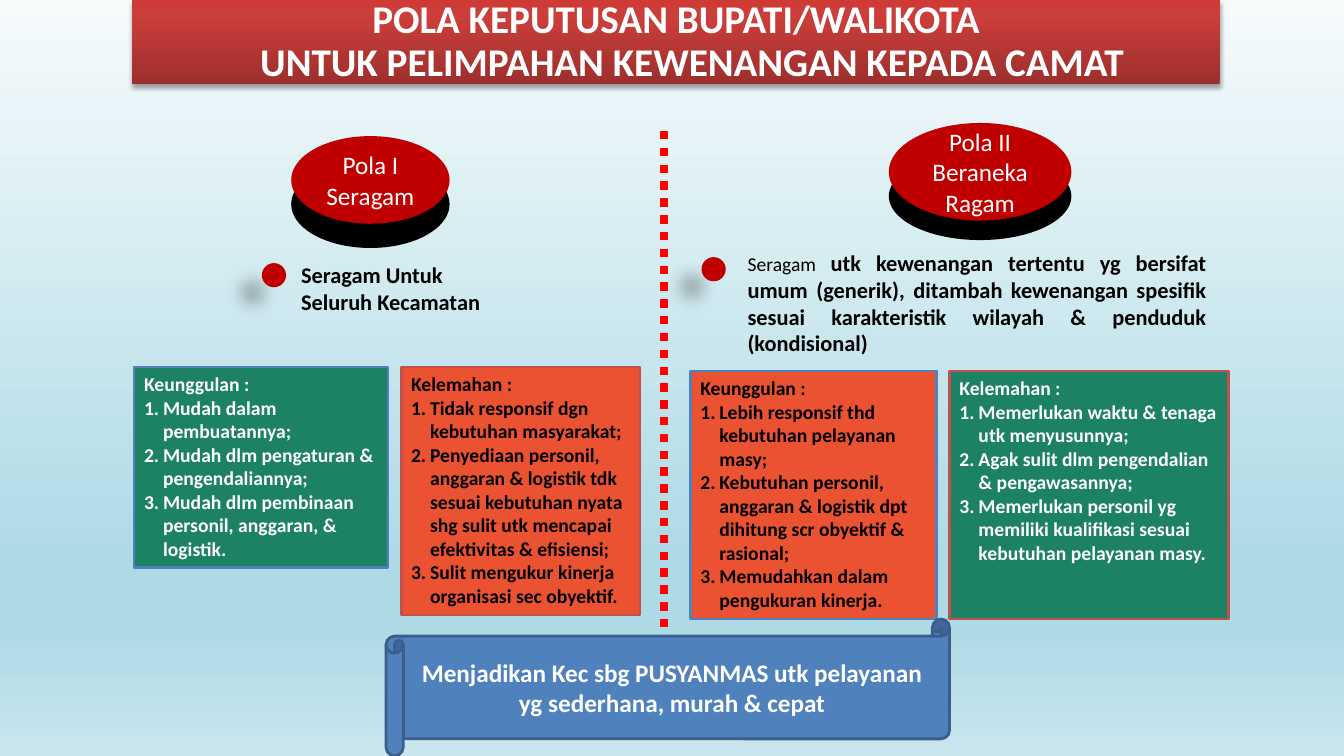
"""Build the slide on decree patterns for delegating authority to the Camat."""
from lxml.etree import SubElement
from pptx import Presentation
from pptx.dml.color import RGBColor
from pptx.enum.dml import MSO_LINE
from pptx.enum.shapes import MSO_CONNECTOR, MSO_SHAPE
from pptx.enum.text import MSO_ANCHOR, PP_ALIGN
from pptx.oxml.ns import qn
from pptx.util import Cm, Pt

WHITE = RGBColor(0xFF, 0xFF, 0xFF)
BLACK = RGBColor(0, 0, 0)
DARK_RED = RGBColor(0xC0, 0, 0)
BRIGHT_RED = RGBColor(0xFF, 0, 0)
GREEN = RGBColor(0x1D, 0x81, 0x64)
ORANGE = RGBColor(0xEB, 0x52, 0x32)
BLUE = RGBColor(0x4F, 0x81, 0xBD)
BRICK = RGBColor(0xC0, 0x50, 0x4D)
NAVY = RGBColor(0x3A, 0x5F, 0x8C)
SKY = [(0, "F6FBFC"), (74, "AEDAE5"), (83, "AEDAE5"), (100, "C9E6EE")]
TITLE_RED = [(0, "9C2F2D"), (80, "CB3E3A"), (100, "CE3B37")]

TITLE = "POLA KEPUTUSAN BUPATI/WALIKOTA\vUNTUK PELIMPAHAN KEWENANGAN KEPADA CAMAT"
BADGES = [
    (["Pola I", "Seragam"], (7.34, 3.43, 3.99, 2.21), 4.04),
    (["Pola II", "Beraneka Ragam"], (22.4, 3.1, 4.6, 2.46), 3.84),
]
SUMMARIES = [
    ([("Seragam Untuk Seluruh Kecamatan", 16, True)],
     (7.34, 6.45, 5.54, 1.63), (6.6, 6.63), PP_ALIGN.LEFT),
    ([("Seragam ", 14, False),
      ("utk kewenangan tertentu yg bersifat umum (generik), ditambah kewenangan "
       "spesifik sesuai karakteristik wilayah & penduduk (kondisional)", 16, True)],
     (18.59, 6.15, 12.07, 3), (17.68, 6.48), PP_ALIGN.JUSTIFY),
]
CARDS = [
    ("Keunggulan :",
     ["Mudah dalam pembuatannya;",
      "Mudah dlm pengaturan & pengendaliannya;",
      "Mudah dlm pembinaan personil, anggaran, & logistik."],
     (3.38, 9.25, 6.4, 5.05), GREEN, BLUE, WHITE),
    ("Kelemahan :",
     ["Tidak responsif dgn kebutuhan masyarakat;",
      "Penyediaan personil, anggaran & logistik tdk sesuai kebutuhan nyata shg "
      "sulit utk mencapai efektivitas & efisiensi;",
      "Sulit mengukur kinerja organisasi sec obyektif."],
     (10.11, 9.25, 6.02, 6.25), ORANGE, BRICK, BLACK),
    ("Keunggulan :",
     ["Lebih responsif thd kebutuhan pelayanan masy;",
      "Kebutuhan personil, anggaran & logistik dpt dihitung scr obyektif & rasional;",
      "Memudahkan dalam pengukuran kinerja."],
     (17.4, 9.35, 6.2, 6.25), ORANGE, BLUE, BLACK),
    ("Kelemahan :",
     ["Memerlukan waktu & tenaga utk menyusunnya;",
      "Agak sulit dlm pengendalian & pengawasannya;",
      "Memerlukan personil yg memiliki kualifikasi sesuai kebutuhan pelayanan masy."],
     (23.93, 9.35, 7.04, 6.25), GREEN, BRICK, WHITE),
]
CLOSING = ["Menjadikan Kec sbg PUSYANMAS utk pelayanan", "yg sederhana, murah & cepat"]


def style_run(r, size, color, bold):
    r.font.name = "Calibri"
    r.font.size = Pt(size)
    r.font.bold = bold
    r.font.color.rgb = color


def write(tf, lines, size=14, color=BLACK, bold=False, align=PP_ALIGN.LEFT,
          anchor=MSO_ANCHOR.TOP, hang=0, spacing=None, numbered_from=None):
    tf.word_wrap = True
    tf.vertical_anchor = anchor
    for i, line in enumerate(lines):
        p = tf.paragraphs[0] if i == 0 else tf.add_paragraph()
        p.text = line
        p.alignment = align
        p.line_spacing = spacing
        for r in p.runs:
            style_run(r, size, color, bold)
        pPr = p._p.get_or_add_pPr()
        pPr.set("marL", str(Cm(hang)))
        pPr.set("indent", str(-Cm(hang)))
        if numbered_from is not None and i >= numbered_from:
            SubElement(pPr, qn("a:buAutoNum"), type="arabicPeriod")


def add_block(s, kind, box, fill=None, line=None):
    sp = s.shapes.add_shape(kind, *map(Cm, box))
    sp.shadow.inherit = False
    if fill is not None:
        sp.fill.solid()
        sp.fill.fore_color.rgb = fill
    if line is None:
        sp.line.fill.background()
    else:
        sp.line.color.rgb = line
        sp.line.width = Pt(2)
    return sp


def set_gradient(fill, root, stops, angle):
    fill.gradient()
    fill.gradient_angle = angle
    gs_list = root.find(".//" + qn("a:gsLst"))
    for gs in list(gs_list):
        gs_list.remove(gs)
    for pos, color in stops:
        gs = SubElement(gs_list, qn("a:gs"), pos=str(pos * 1000))
        SubElement(gs, qn("a:srgbClr"), val=color)


def add_shadow(sp, opacity, blur, distance, direction):
    effects = sp.element.spPr.find(qn("a:effectLst"))
    shadow = SubElement(effects, qn("a:outerShdw"), blurRad=str(Pt(blur)),
                        dist=str(Pt(distance)), dir=str(direction * 60000),
                        rotWithShape="0")
    color = SubElement(shadow, qn("a:srgbClr"), val="000000")
    SubElement(color, qn("a:alpha"), val=str(opacity * 1000))


def main():
    prs = Presentation()
    prs.slide_width, prs.slide_height = Cm(33.87), Cm(19.05)
    s = prs.slides.add_slide(prs.slide_layouts[6])
    set_gradient(s.background.fill, s.element, SKY, 270)

    title = add_block(s, MSO_SHAPE.RECTANGLE, (3.33, 0, 27.41, 2.13))
    set_gradient(title.fill, title.element, TITLE_RED, 90)
    add_shadow(title, 35, 3.1, 1.8, 90)
    write(title.text_frame, [TITLE], size=28, color=WHITE, bold=True,
          align=PP_ALIGN.CENTER, anchor=MSO_ANCHOR.MIDDLE, hang=0.81, spacing=0.9)

    for lines, box, base_top in BADGES:
        add_block(s, MSO_SHAPE.OVAL, (box[0], base_top, box[2], 2.21), BLACK)
        badge = add_block(s, MSO_SHAPE.OVAL, box, DARK_RED)
        write(badge.text_frame, lines, size=18, color=WHITE,
              align=PP_ALIGN.CENTER, anchor=MSO_ANCHOR.MIDDLE)

    for runs, box, dot, align in SUMMARIES:
        marker = add_block(s, MSO_SHAPE.OVAL, (*dot, 0.61, 0.61), DARK_RED)
        add_shadow(marker, 28, 11.8, 19.7, 141)
        tf = s.shapes.add_textbox(*map(Cm, box)).text_frame
        tf.word_wrap = True
        p = tf.paragraphs[0]
        p.alignment = align
        for text, size, bold in runs:
            r = p.add_run()
            r.text = text
            style_run(r, size, BLACK, bold)

    divider = s.shapes.add_connector(MSO_CONNECTOR.STRAIGHT, Cm(16.74), Cm(3.3),
                                     Cm(16.74), Cm(15.93))
    divider.line.color.rgb = BRIGHT_RED
    divider.line.width = Pt(6)
    divider.line.dash_style = MSO_LINE.ROUND_DOT
    SubElement(divider.element.spPr, qn("a:effectLst"))

    for heading, items, box, fill, line, color in CARDS:
        card = add_block(s, MSO_SHAPE.RECTANGLE, box, fill, line)
        write(card.text_frame, [heading, *items], color=color, bold=True,
              hang=0.48, numbered_from=1)

    scroll = add_block(s, MSO_SHAPE.HORIZONTAL_SCROLL, (9.73, 15.6, 14.2, 3.45), BLUE, NAVY)
    write(scroll.text_frame, CLOSING, size=18, color=WHITE, bold=True,
          align=PP_ALIGN.CENTER, anchor=MSO_ANCHOR.MIDDLE)
    prs.save("out.pptx")


if __name__ == "__main__":
    main()
